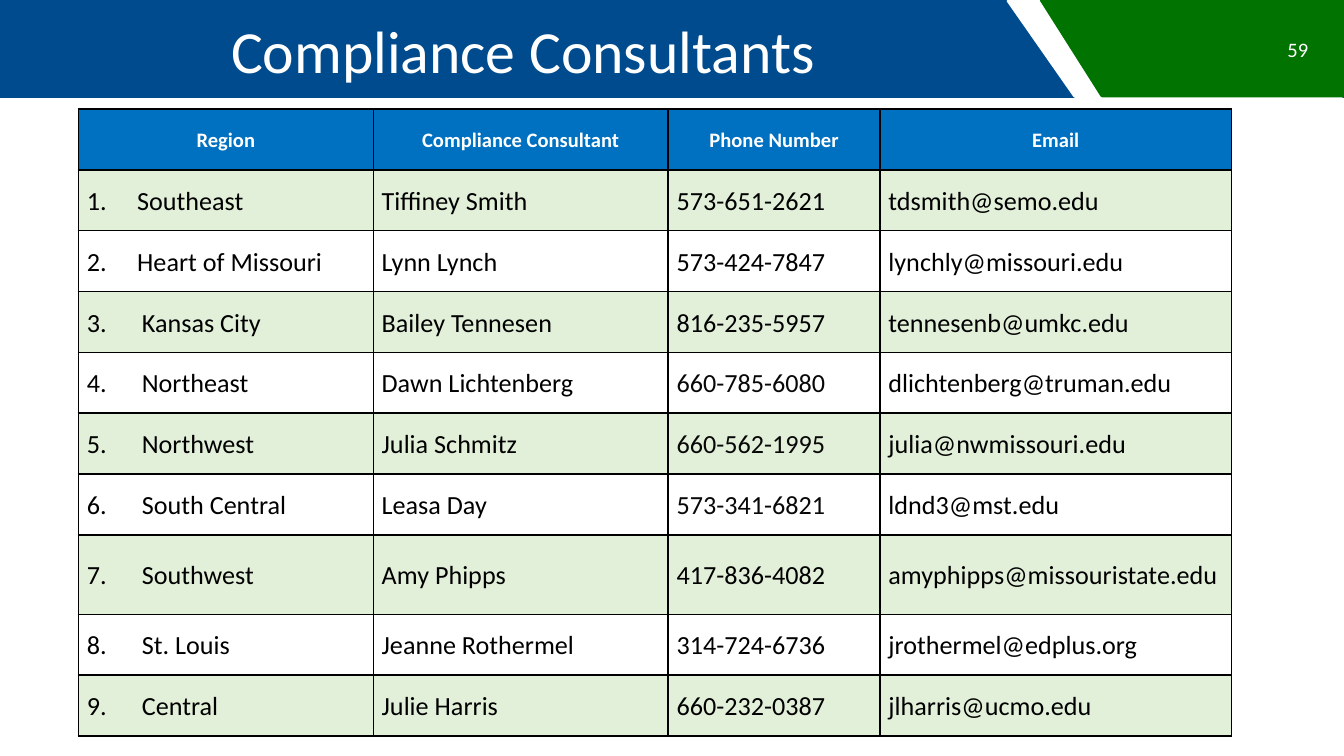
from lxml import etree
from pptx import Presentation
from pptx.dml.color import RGBColor
from pptx.enum import shapes, text
from pptx.oxml import ns
from pptx.util import Pt

TITLE = "Compliance Consultants"
PAGE_NUMBER = "59"
HEADINGS = ["Region", "Compliance Consultant", "Phone Number", "Email"]
CONSULTANTS = [
    ("Southeast", "Tiffiney Smith", "573-651-2621", "tdsmith@semo.edu"),
    ("Heart of Missouri", "Lynn Lynch", "573-424-7847", "lynchly@missouri.edu"),
    ("Kansas City", "Bailey Tennesen", "816-235-5957", "tennesenb@umkc.edu"),
    ("Northeast", "Dawn Lichtenberg", "660-785-6080", "dlichtenberg@truman.edu"),
    ("Northwest", "Julia Schmitz", "660-562-1995", "julia@nwmissouri.edu"),
    ("South Central", "Leasa Day", "573-341-6821", "ldnd3@mst.edu"),
    ("Southwest", "Amy Phipps", "417-836-4082", "amyphipps@missouristate.edu"),
    ("St. Louis", "Jeanne Rothermel", "314-724-6736", "jrothermel@edplus.org"),
    ("Central", "Julie Harris", "660-232-0387", "jlharris@ucmo.edu"),
]
COLUMN_WIDTHS = [158, 158, 113.5, 188.25]
ROW_HEIGHT, TALL_ROW_HEIGHT, TALL_ROW = 32.6, 42.6, 7
SOFT_BLACK_PHONES = (4, 5, 6)

BANNER = [  # preset, left, top, width, height, rotation, colour
    (shapes.MSO_SHAPE.RECTANGLE, 0, 0, 720, 52.5, 0, "004B8D"),
    (shapes.MSO_SHAPE.FLOWCHART_MANUAL_INPUT, 604, -63.4, 51.1, 178.6, 270, "FFFFFF"),
    (shapes.MSO_SHAPE.FLOWCHART_MANUAL_INPUT, 613.5, -55.4, 51.1, 162, 270, "007300"),
]
ALIGN = text.PP_ALIGN


def rgb(colour):
    return RGBColor.from_string(colour)


def write(paragraph, words, size=14, colour="000000", bold=False,
          align=ALIGN.LEFT, spacing=None, number=None, indent=0, hanging=0):
    paragraph.alignment = align
    paragraph.line_spacing = spacing
    properties = paragraph._p.get_or_add_pPr()
    properties.set("marL", str(Pt(indent)))
    properties.set("indent", str(-Pt(hanging)))
    if number:
        etree.SubElement(properties, ns.qn("a:buAutoNum"),
                         type="arabicPeriod", startAt=str(number))
    run = paragraph.add_run()
    run.text = words
    run.font.name = "Calibri"
    run.font.size = Pt(size)
    run.font.bold = bold
    run.font.color.rgb = rgb(colour)


def add_borders(cell, colour="000000", width=1):
    properties = cell._tc.get_or_add_tcPr()
    for side in ("lnL", "lnR", "lnT", "lnB"):
        line = etree.SubElement(properties, ns.qn(f"a:{side}"), w=str(Pt(width)))
        fill = etree.SubElement(line, ns.qn("a:solidFill"))
        etree.SubElement(fill, ns.qn("a:srgbClr"), val=colour)


def format_cell(cell, fill):
    cell.margin_left = cell.margin_right = Pt(4.5)
    cell.margin_top = cell.margin_bottom = 0
    cell.vertical_anchor = text.MSO_ANCHOR.MIDDLE
    add_borders(cell)
    if fill:
        cell.fill.solid()
        cell.fill.fore_color.rgb = rgb(fill)
    else:
        cell.fill.background()


def add_banner(slide):
    for preset, left, top, width, height, rotation, colour in BANNER:
        band = slide.shapes.add_shape(preset, Pt(left), Pt(top), Pt(width), Pt(height))
        band.rotation = rotation
        band.shadow.inherit = False
        band.fill.solid()
        band.fill.fore_color.rgb = rgb(colour)
        if rotation:
            band.line.color.rgb = rgb(colour)
            band.line.width = Pt(2)
        else:
            band.line.fill.background()


def add_heading(slide):
    title = slide.shapes.title
    title.left, title.top, title.width, title.height = Pt(24), Pt(3), Pt(504), Pt(47)
    title.text_frame.vertical_anchor = text.MSO_ANCHOR.MIDDLE
    title.text_frame.auto_size = text.MSO_AUTO_SIZE.NONE
    write(title.text_frame.paragraphs[0], TITLE, size=32, colour="FFFFFF",
          align=ALIGN.CENTER, indent=8.6)
    # The title comes first in the drawing order; lift it above the banner.
    title.element.getparent().append(title.element)

    page = slide.shapes.add_textbox(Pt(672), Pt(15.4), Pt(36), Pt(21.6)).text_frame
    page.word_wrap = True
    page.vertical_anchor = text.MSO_ANCHOR.MIDDLE
    write(page.paragraphs[0], PAGE_NUMBER, size=11, colour="FFFFFF", align=ALIGN.RIGHT)


def add_directory(slide):
    heights = [ROW_HEIGHT] * (len(CONSULTANTS) + 1)
    heights[TALL_ROW] = TALL_ROW_HEIGHT
    directory = slide.shapes.add_table(
        len(heights), len(HEADINGS), Pt(42), Pt(58.4),
        Pt(sum(COLUMN_WIDTHS)), Pt(sum(heights))).table
    directory.horz_banding = False
    for column, width in zip(directory.columns, COLUMN_WIDTHS):
        column.width = Pt(width)
    for row, height in zip(directory.rows, heights):
        row.height = Pt(height)

    for column, heading in enumerate(HEADINGS):
        cell = directory.cell(0, column)
        format_cell(cell, "0070C0")
        write(cell.text_frame.paragraphs[0], heading, size=11, colour="FFFFFF",
              bold=True, align=ALIGN.CENTER, spacing=1.07)
    for number, consultant in enumerate(CONSULTANTS, 1):
        for column, words in enumerate(consultant):
            cell = directory.cell(number, column)
            format_cell(cell, "E2EFD9" if number % 2 else None)
            style = {}
            if column == 0:
                indent = 27 if number <= 2 else 29.5
                style = dict(align=ALIGN.JUSTIFY, number=number,
                             indent=indent, hanging=indent)
            elif column == 2 and number in SOFT_BLACK_PHONES:
                style = dict(colour="080808")
            write(cell.text_frame.paragraphs[0], words, spacing=1.07, **style)


def main():
    deck = Presentation()
    deck.slide_width, deck.slide_height = Pt(720), Pt(405)
    slide = deck.slides.add_slide(deck.slide_layouts.get_by_name("Title Only"))
    add_banner(slide)
    add_heading(slide)
    add_directory(slide)
    deck.save("out.pptx")


if __name__ == "__main__":
    main()
